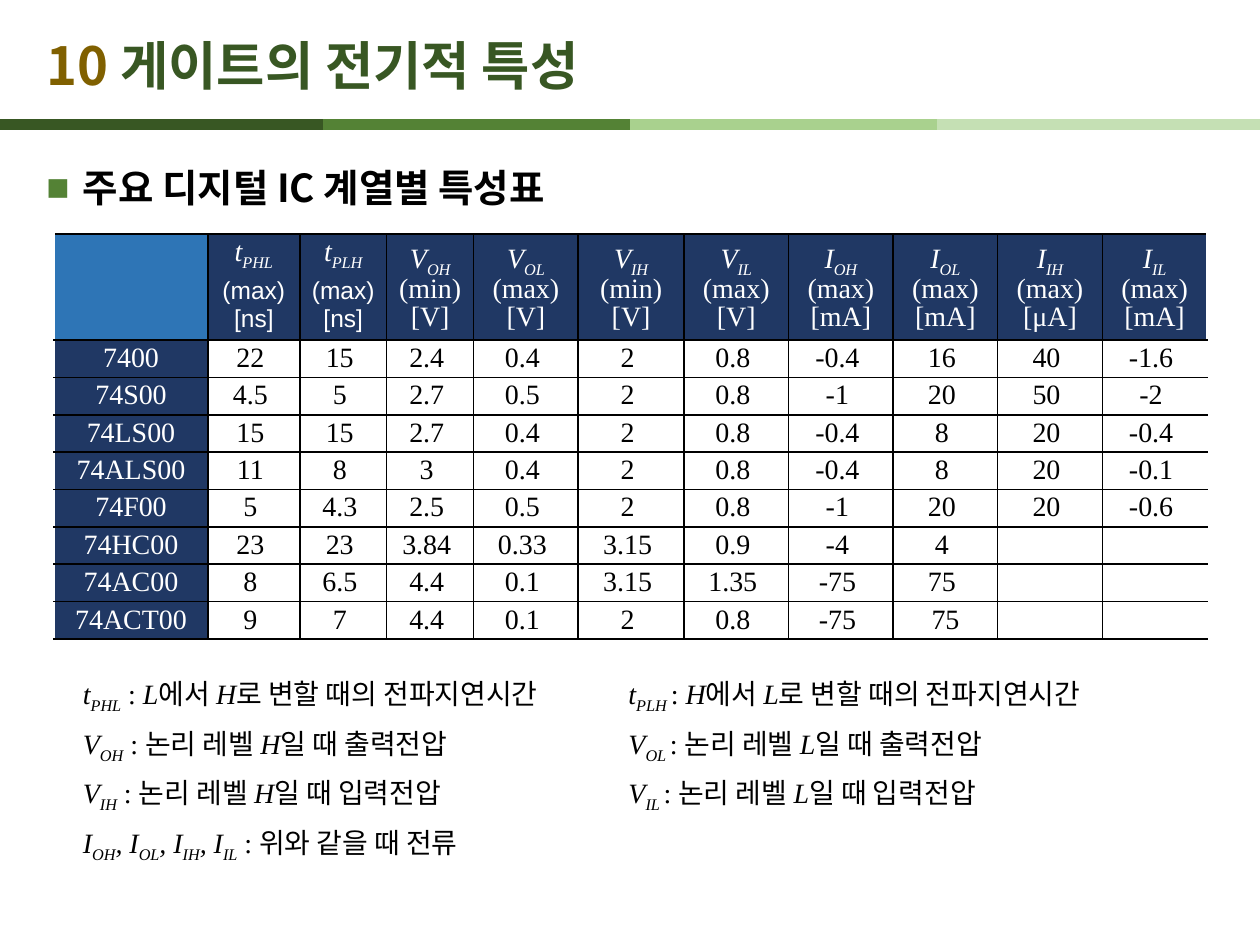
import pptx
import pptx.util
import pptx.dml.color
import pptx.enum.shapes
import pptx.enum.text
import pptx.oxml.ns
import lxml.etree

Inches, Pt = pptx.util.Inches, pptx.util.Pt
ALIGN, ANCHOR = pptx.enum.text.PP_ALIGN, pptx.enum.text.MSO_ANCHOR
SERIF, SANS, HANGUL = "Times New Roman", "Arial", "Noto Sans CJK KR"
BLACK, WHITE, NAVY, BLUE = "000000", "FFFFFF", "203864", "2E75B6"

BARS = [(0, "385723"), (2.56, "548235"), (5, "A9D18E"), (7.44, "C5E0B4")]
WIDTHS = [1.22, 0.73, 0.69, 0.69, 0.83, 0.84] + [0.83] * 5
HEADS = ["t PHL (max) [ns]", "t PLH (max) [ns]", "V OH (min) [V]",
         "V OL (max) [V]", "V IH (min) [V]", "V IL (max) [V]",
         "I OH (max) [mA]", "I OL (max) [mA]", "I IH (max) [μA]",
         "I IL (max) [mA]"]
GATES = [
    "7400 22 15 2.4 0.4 2 0.8 -0.4 16 40 -1.6",
    "74S00 4.5 5 2.7 0.5 2 0.8 -1 20 50 -2",
    "74LS00 15 15 2.7 0.4 2 0.8 -0.4 8 20 -0.4",
    "74ALS00 11 8 3 0.4 2 0.8 -0.4 8 20 -0.1",
    "74F00 5 4.3 2.5 0.5 2 0.8 -1 20 20 -0.6",
    "74HC00 23 23 3.84 0.33 3.15 0.9 -4 4",
    "74AC00 8 6.5 4.4 0.1 3.15 1.35 -75 75",
    "74ACT00 9 7 4.4 0.1 2 0.8 -75 75",
]
# Runs are split at "|"; "/" marks italics and "_" an italic subscript.
NOTES = [
    "/t|_PHL| : |/L|에서 |/H|로 변할 때의 전파지연시간\t"
    "|/t|_PLH |: |/H|에서 |/L|로 변할 때의 전파지연시간",
    "/V|_OH| : 논리 레벨 |/H|일 때 출력전압\t"
    "|/V|_OL |: 논리 레벨 |/L|일 때 출력전압",
    "/V|_IH| : 논리 레벨 |/H|일 때 입력전압\t"
    "|/V|_IL |: 논리 레벨 |/L|일 때 입력전압",
    "/I|_OH|/, I|_OL|/, I|_IH|/, I|_IL| : 위와 같을 때 전류",
]


def paint(hue):
    return pptx.dml.color.RGBColor.from_string(hue)


def add(parent, tag, **attrs):
    node = lxml.etree.SubElement(parent, pptx.oxml.ns.qn(tag))
    for key, value in attrs.items():
        node.set(key, str(value))
    return node


def write(para, text, size, face=SERIF, hue=BLACK, bold=False):
    """Add the runs of one marked-up line."""
    for part in text.split("|"):
        run = para.add_run()
        run.text = part.lstrip("/_")
        font = run.font
        font.size, font.name, font.bold = Pt(size), face, bold
        font.italic = part[:1] in ("/", "_")
        font.color.rgb = paint(hue)
        props = run._r.get_or_add_rPr()
        add(props, "a:ea", typeface=HANGUL)
        if part.startswith("_"):
            props.set("baseline", "-25000")


def add_box(slide, x, y, w, h):
    shape = slide.shapes.add_textbox(Inches(x), Inches(y), Inches(w), Inches(h))
    shape.text_frame.word_wrap = True
    return shape.text_frame


def add_bars(slide, y, w):
    for x, hue in BARS:
        bar = slide.shapes.add_connector(
            pptx.enum.shapes.MSO_CONNECTOR.STRAIGHT,
            Inches(x), Inches(y), Inches(x + w), Inches(y))
        bar.line.color.rgb = paint(hue)
        bar.line.width = Pt(6)
        add(bar._element.spPr, "a:effectLst")


def add_title(slide, x, y, w, h):
    frame = add_box(slide, x, y, w, h)
    frame.vertical_anchor = ANCHOR.MIDDLE
    para = frame.paragraphs[0]
    write(para, "10 ", 30, HANGUL, "806000", True)
    write(para, "게이트의 전기적 특성", 30, HANGUL, "385723", True)


def add_topic(slide, x, y, w, h):
    para = add_box(slide, x, y, w, h).paragraphs[0]
    para.line_spacing = 1.5
    props = para._p.get_or_add_pPr()
    props.set("marL", str(Inches(0.29)))
    props.set("indent", str(-Inches(0.29)))
    add(add(props, "a:buClr"), "a:srgbClr", val="548235")
    add(props, "a:buFont", typeface=SANS)
    add(props, "a:buChar", char="■")
    write(para, "주요 디지털 IC 계열별 특성표", 22, HANGUL, BLACK, True)


def edge(cell, side, width):
    line = add(cell._tc.get_or_add_tcPr(), "a:" + side, w=Pt(width))
    add(add(line, "a:solidFill"), "a:srgbClr", val=BLACK)


def style(cell, row, col, last):
    """Set margins, borders and fill; the table has no outer side borders."""
    cell.margin_left = cell.margin_right = cell.margin_top = Inches(0.02)
    cell.margin_bottom = Inches(0.01)
    if col > 0:
        edge(cell, "lnL", 1)
    if col < len(WIDTHS) - 1:
        edge(cell, "lnR", 1)
    edge(cell, "lnT", 1.5 if row == 0 else 1)
    edge(cell, "lnB", 1.5 if row == last else 1)
    if row and col:
        cell.fill.background()
    else:
        cell.fill.solid()
        cell.fill.fore_color.rgb = paint(NAVY if row or col else BLUE)


def fill_head(cell, text, delay):
    name, mark, limit, unit = text.split()
    frame = cell.text_frame
    lines = [f"/{name}|_{mark}", limit, unit]
    for i, line in enumerate(lines):
        para = frame.add_paragraph() if i else frame.paragraphs[0]
        para.alignment = ALIGN.CENTER
        if delay and i == 1:
            para.space_before = Pt(2.8)
        if not delay:
            para.line_spacing = 0.9
        small = delay and i > 0
        write(para, line, 14 if small else 16, SANS if small else SERIF, WHITE)
    if not delay:
        cell.vertical_anchor = ANCHOR.MIDDLE


def add_specs(slide, x, y, w, h):
    last = len(GATES)
    table = slide.shapes.add_table(last + 1, len(WIDTHS), Inches(x), Inches(y),
                                   Inches(w), Inches(h)).table
    table.first_row = table.horz_banding = False
    for col, width in zip(table.columns, WIDTHS):
        col.width = Inches(width)
    top = 0.8
    for i, row in enumerate(table.rows):
        row.height = Inches((h - top) / last if i else top)
        values = GATES[i - 1].split() if i else [""] + HEADS
        for j, cell in enumerate(row.cells):
            style(cell, i, j, last)
            para = cell.text_frame.paragraphs[0]
            if j >= len(values) or not values[j]:
                para._p.get_or_add_endParaRPr().set("sz", "1600")
            elif i == 0:
                fill_head(cell, values[j], j < 3)
            else:
                para.alignment = ALIGN.CENTER
                tail = "" if j == 0 or (i, j) == (last, 8) else " "
                write(para, values[j] + tail, 16, hue=BLACK if j else WHITE)


def add_notes(slide, x, y, w, h):
    frame = add_box(slide, x, y, w, h)
    for i, note in enumerate(NOTES):
        para = frame.add_paragraph() if i else frame.paragraphs[0]
        if i:
            para.space_before = Pt(6.5)
        tabs = add(para._p.get_or_add_pPr(), "a:tabLst")
        add(tabs, "a:tab", pos=Inches(4.33), algn="l")
        write(para, note, 16)


def main():
    deck = pptx.Presentation()
    deck.slide_width, deck.slide_height = Inches(10), Inches(7.5)
    slide = deck.slides.add_slide(deck.slide_layouts[6])
    add_bars(slide, 0.99, 2.56)
    add_title(slide, 0.27, 0.21, 8.58, 0.6)
    add_topic(slide, 0.27, 1.07, 9.45, 5.98)
    add_specs(slide, 0.43, 1.86, 9.17, 3.1)
    add_notes(slide, 0.56, 5.32, 9.17, 1.57)
    deck.save("out.pptx")


if __name__ == "__main__":
    main()
